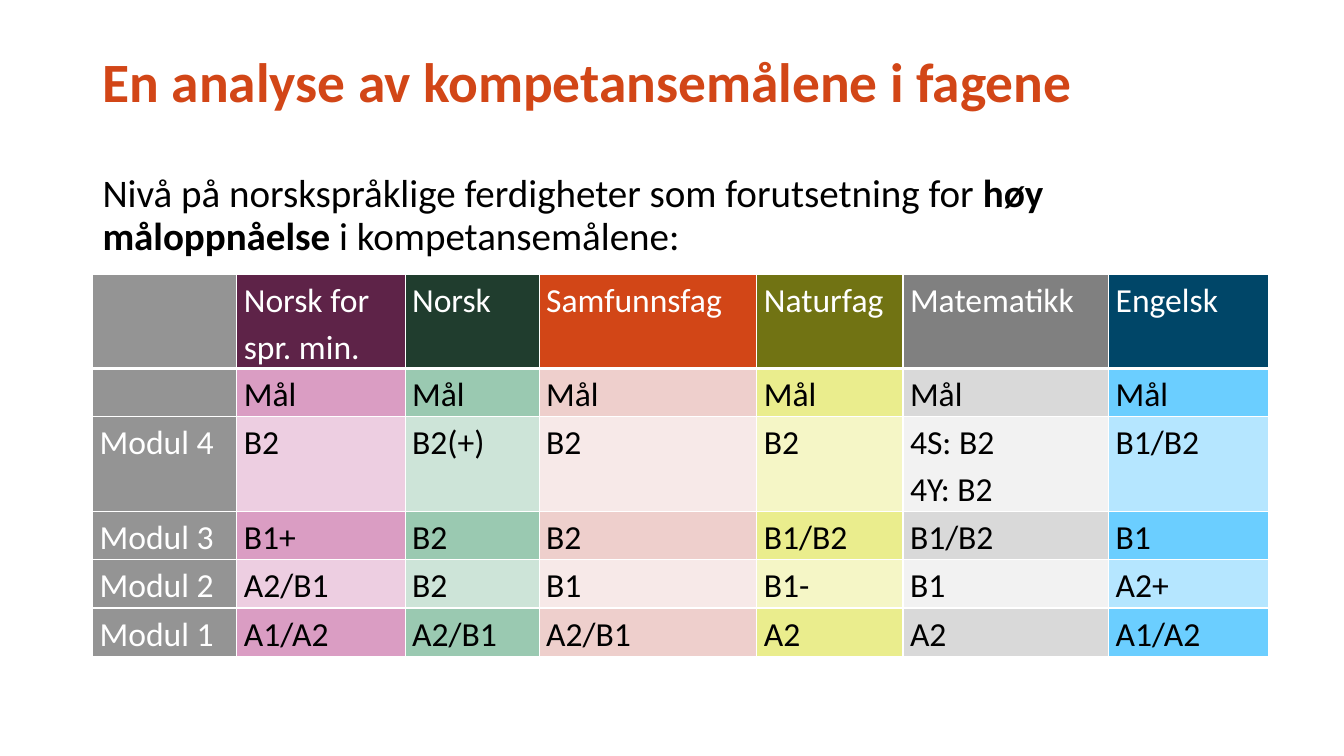
from lxml import etree
from pptx import Presentation
from pptx.dml.color import RGBColor
from pptx.enum import text
from pptx.oxml import ns
from pptx.util import Pt

# Content
HEADING = "En analyse av kompetansemålene i fagene"
INTRO = [
    ("Nivå på norskspråklige ferdigheter som forutsetning for ", False),
    ("høy måloppnåelse ", True),
    ("i kompetansemålene:", False),
]
LEVELS = [
    ["", "Norsk for\nspr. min.", "Norsk", "Samfunnsfag", "Naturfag", "Matematikk", "Engelsk"],
    ["", "Mål", "Mål", "Mål", "Mål", "Mål", "Mål"],
    ["Modul 4", "B2", "B2(+)", "B2", "B2", "4S: B2\n4Y: B2", "B1/B2"],
    ["Modul 3", "B1+", "B2", "B2", "B1/B2", "B1/B2", "B1"],
    ["Modul 2", "A2/B1", "B2", "B1", "B1-", "B1", "A2+"],
    ["Modul 1", "A1/A2", "A2/B1", "A2/B1", "A2", "A2", "A1/A2"],
]

# Colours: header, strong band and light band of each column
WHITE = RGBColor(0xFF, 0xFF, 0xFF)
BLACK = RGBColor(0, 0, 0)
ORANGE = RGBColor(0xD2, 0x46, 0x17)
GREY = RGBColor(0x94, 0x94, 0x94)
COLUMN_COLOURS = [
    (GREY, GREY, GREY),
    (RGBColor(0x5E, 0x23, 0x48), RGBColor(0xDA, 0x9D, 0xC3), RGBColor(0xED, 0xCE, 0xE1)),
    (RGBColor(0x20, 0x3D, 0x2E), RGBColor(0x9A, 0xC9, 0xB1), RGBColor(0xCD, 0xE4, 0xD8)),
    (ORANGE, RGBColor(0xEE, 0xCF, 0xCC), RGBColor(0xF7, 0xE9, 0xE8)),
    (RGBColor(0x71, 0x73, 0x13), RGBColor(0xEA, 0xED, 0x8D), RGBColor(0xF5, 0xF6, 0xC6)),
    (RGBColor(0x80, 0x80, 0x80), RGBColor(0xD9, 0xD9, 0xD9), RGBColor(0xF2, 0xF2, 0xF2)),
    (RGBColor(0x00, 0x46, 0x68), RGBColor(0x6B, 0xCE, 0xFF), RGBColor(0xB5, 0xE6, 0xFF)),
]

# Layout in points
FONT = "Calibri"
LEFT, TEXT_WIDTH = 66.2, 828
HEADING_TOP, HEADING_HEIGHT = 38.7, 44
INTRO_TOP, INTRO_HEIGHT = 124.4, 62
TABLE_TOP = 195.8
COLUMN_WIDTHS = [103, 120.2, 95.8, 155.5, 104.4, 146.9, 114.5]
LINE_HEIGHT, TWO_LINE_HEIGHT = 34.6, 67.4


def style(paragraph, size, colour, spacing):
    paragraph.line_spacing = spacing
    paragraph.font.name = FONT
    paragraph.font.size = Pt(size)
    paragraph.font.color.rgb = colour


def add_text(slide, top, height, runs, size, colour):
    box = slide.shapes.add_textbox(Pt(LEFT), Pt(top), Pt(TEXT_WIDTH), Pt(height))
    frame = box.text_frame
    frame.word_wrap = True
    frame.margin_top = frame.margin_bottom = 0
    paragraph = frame.paragraphs[0]
    style(paragraph, size, colour, 0.9)
    for words, bold in runs:
        run = paragraph.add_run()
        run.text = words
        run.font.bold = bold


def add_border(cell, side, width):
    properties = cell._tc.get_or_add_tcPr()
    line = etree.SubElement(properties, ns.qn(f"a:ln{side}"), w=str(Pt(width)))
    fill = etree.SubElement(line, ns.qn("a:solidFill"))
    etree.SubElement(fill, ns.qn("a:srgbClr"), val=str(WHITE))


def fill_cell(cell, words, row, column):
    for side in "LRTB":
        add_border(cell, side, 3 if row == 0 and side == "B" else 1)
    header, strong, light = COLUMN_COLOURS[column]
    cell.fill.solid()
    cell.fill.fore_color.rgb = header if row == 0 else strong if row % 2 else light
    cell.margin_left = cell.margin_right = Pt(5)
    cell.margin_top = cell.margin_bottom = 0
    cell.vertical_anchor = text.MSO_ANCHOR.TOP
    cell.text_frame.text = words
    for paragraph in cell.text_frame.paragraphs:
        style(paragraph, 24, WHITE if row == 0 or column == 0 else BLACK, 1.15)


def add_levels_table(slide):
    heights = [TWO_LINE_HEIGHT if any("\n" in words for words in row) else LINE_HEIGHT
               for row in LEVELS]
    table = slide.shapes.add_table(
        len(LEVELS), len(COLUMN_WIDTHS), Pt(LEFT), Pt(TABLE_TOP),
        Pt(sum(COLUMN_WIDTHS)), Pt(sum(heights))).table
    table.first_row = table.horz_banding = False
    for column, width in zip(table.columns, COLUMN_WIDTHS):
        column.width = Pt(width)
    for row, height in enumerate(heights):
        table.rows[row].height = Pt(height)
        for column, words in enumerate(LEVELS[row]):
            fill_cell(table.cell(row, column), words, row, column)


def main():
    presentation = Presentation()
    presentation.slide_width, presentation.slide_height = Pt(960), Pt(540)
    slide = presentation.slides.add_slide(presentation.slide_layouts[6])
    add_text(slide, HEADING_TOP, HEADING_HEIGHT, [(HEADING, True)], 39.6, ORANGE)
    add_text(slide, INTRO_TOP, INTRO_HEIGHT, INTRO, 27.9, BLACK)
    add_levels_table(slide)
    presentation.save("out.pptx")


if __name__ == "__main__":
    main()
